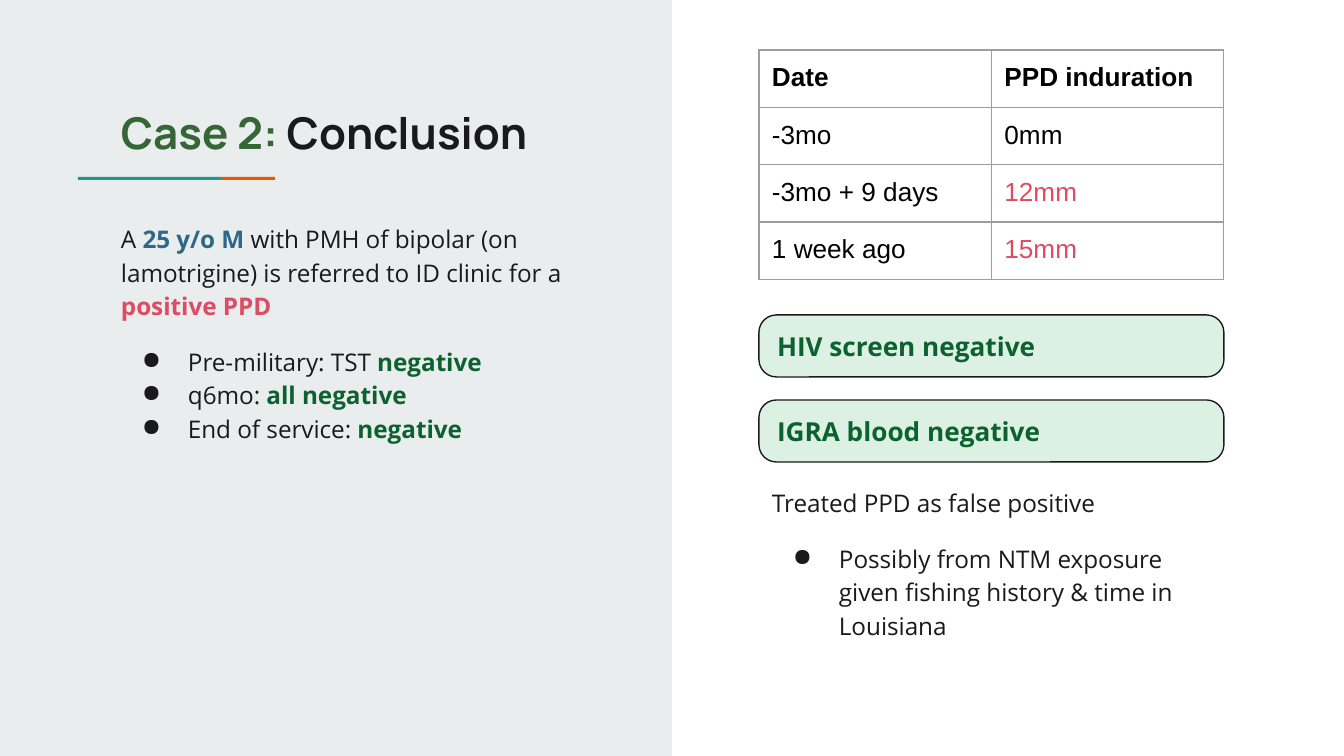
import pptx
import pptx.dml.color
import pptx.enum.shapes
import pptx.enum.text
import pptx.oxml
import pptx.oxml.ns
import pptx.util

EMU_PER_PX = 914400 / 134.4
INSET = 13
COLORS = {
    "panel": "E9EDEE", "ink": "1A1A1A", "black": "000000", "white": "FFFFFF",
    "teal": "1A9988", "orange": "EB5600", "title": "356635", "blue": "2D6987",
    "red": "DC4C64", "green": "0C622E", "mint": "DCF1E4", "border": "9E9E9E",
}
TITLE = {"name": "Manrope", "size": pptx.util.Pt(23.4), "bold": True}
BODY = {"name": "Open Sans", "size": pptx.util.Pt(13), "bold": False}
RESULT = {"name": "Open Sans", "size": pptx.util.Pt(14), "bold": True}
CELL = {"name": "Arial", "size": pptx.util.Pt(14), "bold": False}
STRONG = {"bold": True}
SHAPES = pptx.enum.shapes.MSO_SHAPE


def px(length):
    return pptx.util.Emu(round(length * EMU_PER_PX))


def box(left, top, width, height):
    return [px(length) for length in (left, top, width, height)]


def rgb(name):
    return pptx.dml.color.RGBColor.from_string(COLORS[name])


def set_attributes(target, values):
    for name, value in values.items():
        setattr(target, name, value)


def set_margins(target):
    set_attributes(target, {f"margin_{side}": px(INSET)
                            for side in ("left", "top", "right", "bottom")})


def add_run(paragraph, text, color, style):
    run = paragraph.add_run()
    run.text = text
    set_attributes(run.font, style)
    run.font.color.rgb = rgb(color)


def add_bullet(paragraph):
    properties = paragraph._p.get_or_add_pPr()
    set_attributes_xml = {"marL": px(67), "indent": px(-46)}
    for name, value in set_attributes_xml.items():
        properties.set(name, str(int(value)))
    namespace = pptx.oxml.ns.nsdecls("a")
    for xml in (f'<a:buClr {namespace}><a:srgbClr val="{COLORS["ink"]}"/></a:buClr>',
                f'<a:buChar {namespace} char="●"/>'):
        properties.append(pptx.oxml.parse_xml(xml))


def add_text(slide, bounds, paragraphs, style, line_spacing=1.0):
    """Each paragraph is a list of runs (text, colour, changes to style);
    every paragraph after the first is a bullet."""
    frame = slide.shapes.add_textbox(*box(*bounds)).text_frame
    frame.word_wrap = True
    set_margins(frame)
    for index, runs in enumerate(paragraphs):
        paragraph = frame.add_paragraph() if index else frame.paragraphs[0]
        if index:
            add_bullet(paragraph)
        paragraph.line_spacing = line_spacing
        paragraph.space_before = pptx.util.Pt(12 if index == 1 else 0)
        for text, color, changes in runs:
            add_run(paragraph, text, color, {**style, **changes})


def add_block(slide, kind, bounds, fill, line=None):
    shape = slide.shapes.add_shape(kind, *box(*bounds))
    shape.shadow.inherit = False
    shape.fill.solid()
    shape.fill.fore_color.rgb = rgb(fill)
    if line:
        shape.line.color.rgb = rgb(line)
        shape.line.width = pptx.util.Pt(0.75)
    else:
        shape.line.fill.background()
    return shape


def add_result(slide, top, text):
    shape = add_block(slide, SHAPES.ROUNDED_RECTANGLE, (759, top, 465, 62), "mint", "ink")
    shape.adjustments[0] = 0.28
    frame = shape.text_frame
    set_margins(frame)
    set_attributes(frame, {"word_wrap": True,
                           "vertical_anchor": pptx.enum.text.MSO_ANCHOR.MIDDLE})
    paragraph = frame.paragraphs[0]
    paragraph.alignment = pptx.enum.text.PP_ALIGN.LEFT
    add_run(paragraph, text, "green", RESULT)


def add_borders(cell):
    properties = cell._tc.get_or_add_tcPr()
    for index, side in enumerate(("lnL", "lnR", "lnT", "lnB")):
        properties.insert(index, pptx.oxml.parse_xml(
            f'<a:{side} {pptx.oxml.ns.nsdecls("a")} w="9525"><a:solidFill>'
            f'<a:srgbClr val="{COLORS["border"]}"/></a:solidFill></a:{side}>'))


def add_induration_table(slide, rows):
    bounds = box(759, 50, 465, 56 * len(rows))
    table = slide.shapes.add_table(len(rows), 2, *bounds).table
    for column in table.columns:
        column.width = px(232.5)
    for row_index, (row, values) in enumerate(zip(table.rows, rows)):
        row.height = px(56)
        for cell, (text, color) in zip(row.cells, values):
            cell.fill.solid()
            cell.fill.fore_color.rgb = rgb("white")
            set_margins(cell)
            add_borders(cell)
            add_run(cell.text_frame.paragraphs[0], text, color,
                    {**CELL, "bold": row_index == 0})


def main():
    presentation = pptx.Presentation()
    set_attributes(presentation, {"slide_width": px(1344), "slide_height": px(756)})
    slide = presentation.slides.add_slide(presentation.slide_layouts[6])

    add_block(slide, SHAPES.RECTANGLE, (0, 0, 672, 756), "panel")
    add_block(slide, SHAPES.RECTANGLE, (221, 177, 54, 3), "orange")
    add_block(slide, SHAPES.RECTANGLE, (78, 177, 143, 3), "teal")
    add_text(slide, (108, 93, 554, 79),
             [[("Case 2:", "title", {}), (" Conclusion", "ink", {})]], TITLE)

    history = [("Pre-military: TST ", "negative"), ("q6mo: ", "all negative"),
               ("End of service: ", "negative")]
    summary = [("A ", "ink", {}), ("25 y/o M", "blue", STRONG),
               (" with PMH of bipolar (on lamotrigine) is referred to ID clinic for a ",
                "ink", {}),
               ("positive PPD", "red", STRONG)]
    add_text(slide, (108, 207, 496, 277),
             [summary] + [[(label, "ink", {}), (result, "green", STRONG)]
                          for label, result in history], BODY, 1.15)

    add_induration_table(slide, [
        [("Date", "black"), ("PPD induration", "black")],
        [("-3mo", "black"), ("0mm", "black")],
        [("-3mo + 9 days", "black"), ("12mm", "red")],
        [("1 week ago", "black"), ("15mm", "red")],
    ])
    for index, text in enumerate(("HIV screen negative", "IGRA blood negative")):
        add_result(slide, 315 + 85 * index, text)
    add_text(slide, (759, 471, 465, 233),
             [[("Treated PPD as false positive", "ink", {})],
              [("Possibly from NTM exposure given fishing history & time in Louisiana",
                "ink", {})]], BODY, 1.15)
    presentation.save("out.pptx")


if __name__ == "__main__":
    main()
